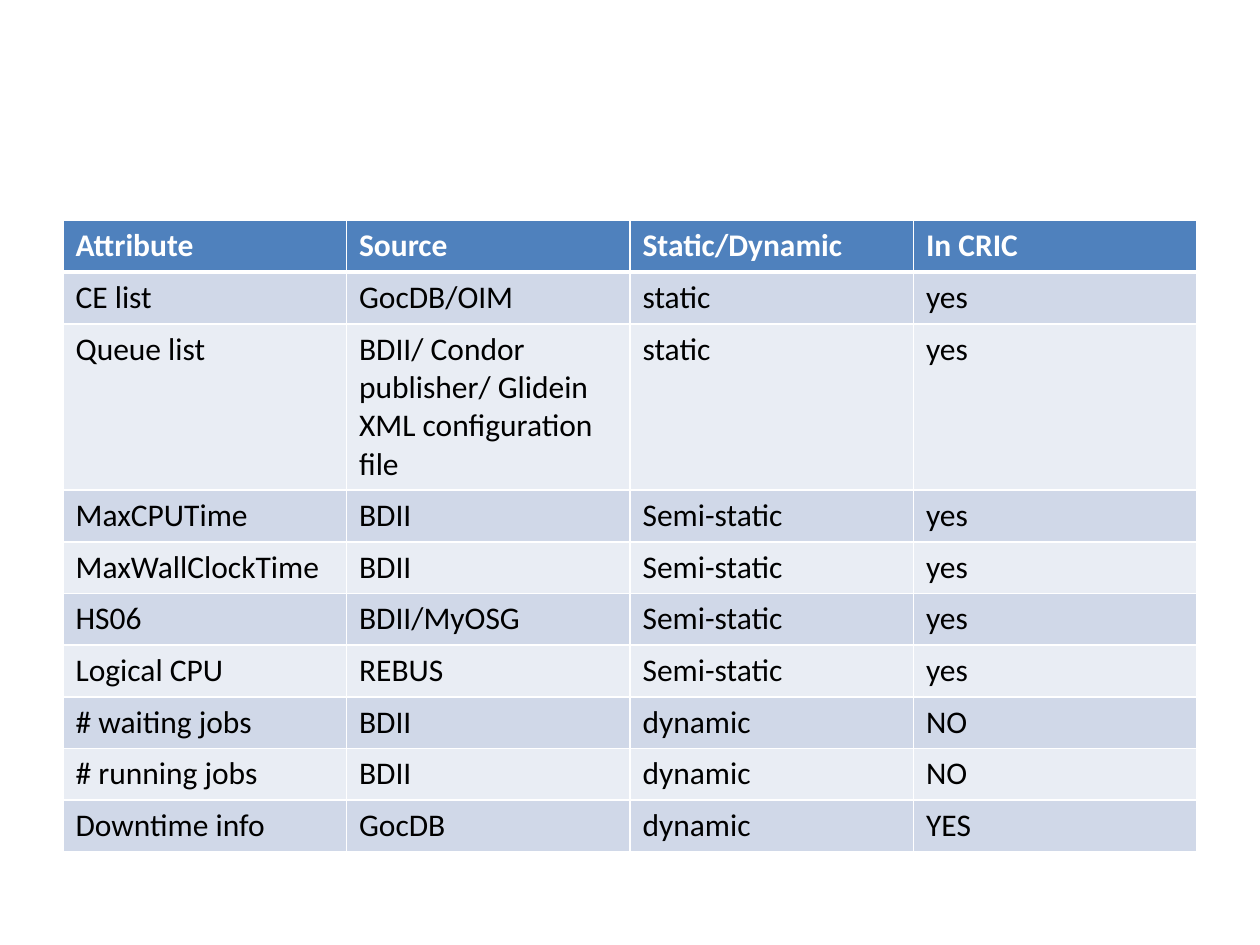
from dataclasses import dataclass

from lxml.etree import SubElement
from pptx import Presentation
from pptx.dml.color import RGBColor
from pptx.oxml.ns import qn
from pptx.util import Inches, Pt


@dataclass(frozen=True)
class Theme:
    font: str = "Calibri"
    text_size: int = 18
    header_fill: str = "4F81BD"
    header_text: str = "FFFFFF"
    band_fills: tuple = ("D0D8E8", "E9EDF4")
    body_text: str = "000000"
    grid: str = "FFFFFF"
    grid_width: int = 1
    header_rule_width: int = 3


THEME = Theme()

HEADER = ("Attribute", "Source", "Static/Dynamic", "In CRIC")
ATTRIBUTES = (
    ("CE list", "GocDB/OIM", "static", "yes"),
    ("Queue list", "BDII/ Condor publisher/ Glidein XML configuration file",
     "static", "yes"),
    ("MaxCPUTime", "BDII", "Semi-static", "yes"),
    ("MaxWallClockTime", "BDII", "Semi-static", "yes"),
    ("HS06", "BDII/MyOSG", "Semi-static", "yes"),
    ("Logical CPU", "REBUS", "Semi-static", "yes"),
    ("# waiting jobs", "BDII", "dynamic", "NO"),
    ("# running jobs", "BDII", "dynamic", "NO"),
    ("Downtime info", "GocDB", "dynamic", "YES"),
)


def set_borders(cell, top_width, bottom_width):
    """Draw the four cell borders; call before the fill, which must follow them."""
    properties = cell._tc.get_or_add_tcPr()
    widths = {"L": THEME.grid_width, "R": THEME.grid_width,
              "T": top_width, "B": bottom_width}
    for side, width in widths.items():
        border = SubElement(properties, qn(f"a:ln{side}"), w=str(Pt(width)))
        fill = SubElement(border, qn("a:solidFill"))
        SubElement(fill, qn("a:srgbClr"), val=THEME.grid)


def fill_cell(cell, text, background, color, bold):
    cell.fill.solid()
    cell.fill.fore_color.rgb = RGBColor.from_string(background)
    cell.text = text
    font = cell.text_frame.paragraphs[0].font
    font.name = THEME.font
    font.size = Pt(THEME.text_size)
    font.bold = bold
    font.color.rgb = RGBColor.from_string(color)


def add_attribute_table(slide, left, top, width, row_height):
    rows = (HEADER, *ATTRIBUTES)
    table = slide.shapes.add_table(
        len(rows), len(HEADER), left, top, width, row_height * len(rows)).table
    for row_index, row in enumerate(rows):
        is_header = row_index == 0
        if is_header:
            background, color = THEME.header_fill, THEME.header_text
        else:
            background = THEME.band_fills[(row_index - 1) % 2]
            color = THEME.body_text
        top_width = THEME.header_rule_width if row_index == 1 else THEME.grid_width
        bottom_width = THEME.header_rule_width if is_header else THEME.grid_width
        for column_index, text in enumerate(row):
            cell = table.cell(row_index, column_index)
            set_borders(cell, top_width, bottom_width)
            fill_cell(cell, text, background, color, bold=is_header)


def main():
    presentation = Presentation()
    presentation.slide_width = Inches(10)
    presentation.slide_height = Inches(7.5)
    blank_layout = presentation.slide_layouts[6]
    slide = presentation.slides.add_slide(blank_layout)
    add_attribute_table(slide, Inches(0.5), Inches(1.75), Inches(9), Inches(0.41))
    presentation.save("out.pptx")


if __name__ == "__main__":
    main()
